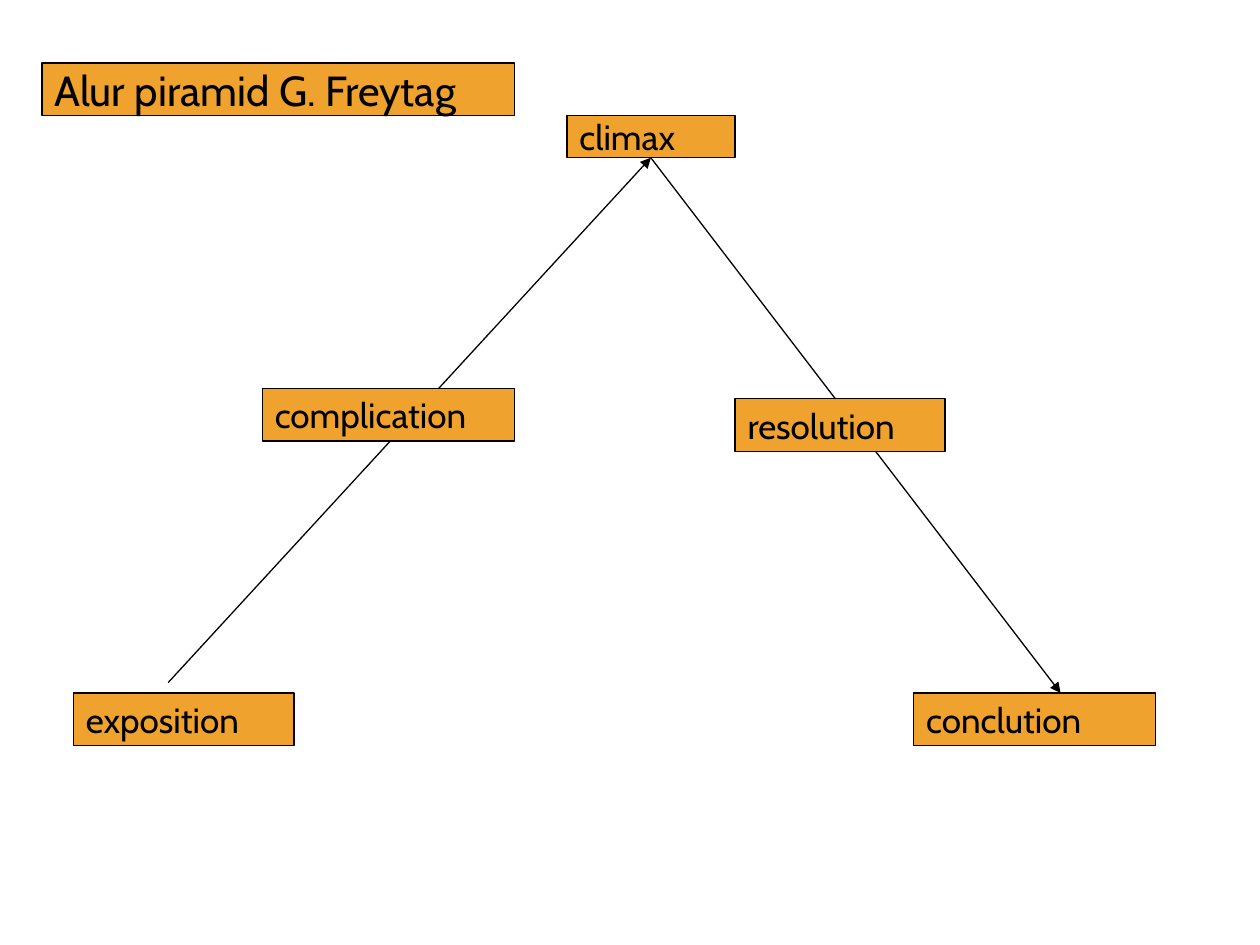
"""Build a slide showing Freytag's plot pyramid."""
from dataclasses import dataclass

from lxml.etree import SubElement
from pptx import Presentation
from pptx.dml.color import RGBColor
from pptx.enum.shapes import MSO_CONNECTOR as Connector, MSO_SHAPE as Shape
from pptx.enum.text import MSO_ANCHOR as Anchor, PP_ALIGN as Align
from pptx.oxml.ns import qn
from pptx.util import Cm, Pt


@dataclass(frozen=True)
class Theme:
    """Colours, font and sizes of the slide."""
    fill: RGBColor = RGBColor(0xF0, 0xA2, 0x2E)
    ink: RGBColor = RGBColor(0, 0, 0)
    font: str = "Cabin"
    title_size: Pt = Pt(24)
    label_size: Pt = Pt(20)
    line_width: Pt = Pt(0.75)


THEME = Theme()
BOX_HEIGHT = 1.06
RISE_START = (3.39, 13.76)
PEAK = (13.12, 3.18)
FALL_END = (21.38, 13.97)
STAGES = [
    ("exposition", 1.48, 13.97, 4.45, BOX_HEIGHT),
    ("complication", 5.29, 7.83, 5.08, BOX_HEIGHT),
    ("climax", 11.43, 2.33, 3.39, 0.85),
    ("resolution", 14.82, 8.04, 4.23, BOX_HEIGHT),
    ("conclution", 18.42, 13.97, 4.87, BOX_HEIGHT),
]


def style_line(line):
    """Give a line the theme's ink and width."""
    line.color.rgb = THEME.ink
    line.width = THEME.line_width


def add_arrow(page, start, end):
    """Draw a straight arrow from start to end."""
    arrow = page.shapes.add_connector(
        Connector.STRAIGHT, *(Cm(value) for value in start + end))
    style_line(arrow.line)
    SubElement(arrow.line._get_or_add_ln(), qn("a:tailEnd"), type="triangle")
    SubElement(arrow._element.spPr, qn("a:effectLst"))


def add_label(page, text, left, top, width, height, size=THEME.label_size):
    """Draw a filled box with left-aligned text."""
    box = page.shapes.add_shape(
        Shape.RECTANGLE, Cm(left), Cm(top), Cm(width), Cm(height))
    box.shadow.inherit = False
    box.fill.solid()
    box.fill.fore_color.rgb = THEME.fill
    style_line(box.line)
    frame = box.text_frame
    frame.text = text
    frame.word_wrap = True
    frame.vertical_anchor = Anchor.MIDDLE
    para = frame.paragraphs[0]
    para.alignment = Align.LEFT
    for span in para.runs:
        span.font.name = THEME.font
        span.font.size = size
        span.font.color.rgb = THEME.ink


def main():
    """Build and save the deck."""
    deck = Presentation()
    deck.slide_width, deck.slide_height = Cm(25.4), Cm(19.05)
    page = deck.slides.add_slide(deck.slide_layouts[6])
    add_arrow(page, RISE_START, PEAK)
    add_arrow(page, PEAK, FALL_END)
    for stage in STAGES:
        add_label(page, *stage)
    add_label(page, "Alur piramid G. Freytag", 0.85, 1.27, 9.53, BOX_HEIGHT,
              THEME.title_size)
    deck.save("out.pptx")


if __name__ == "__main__":
    main()
